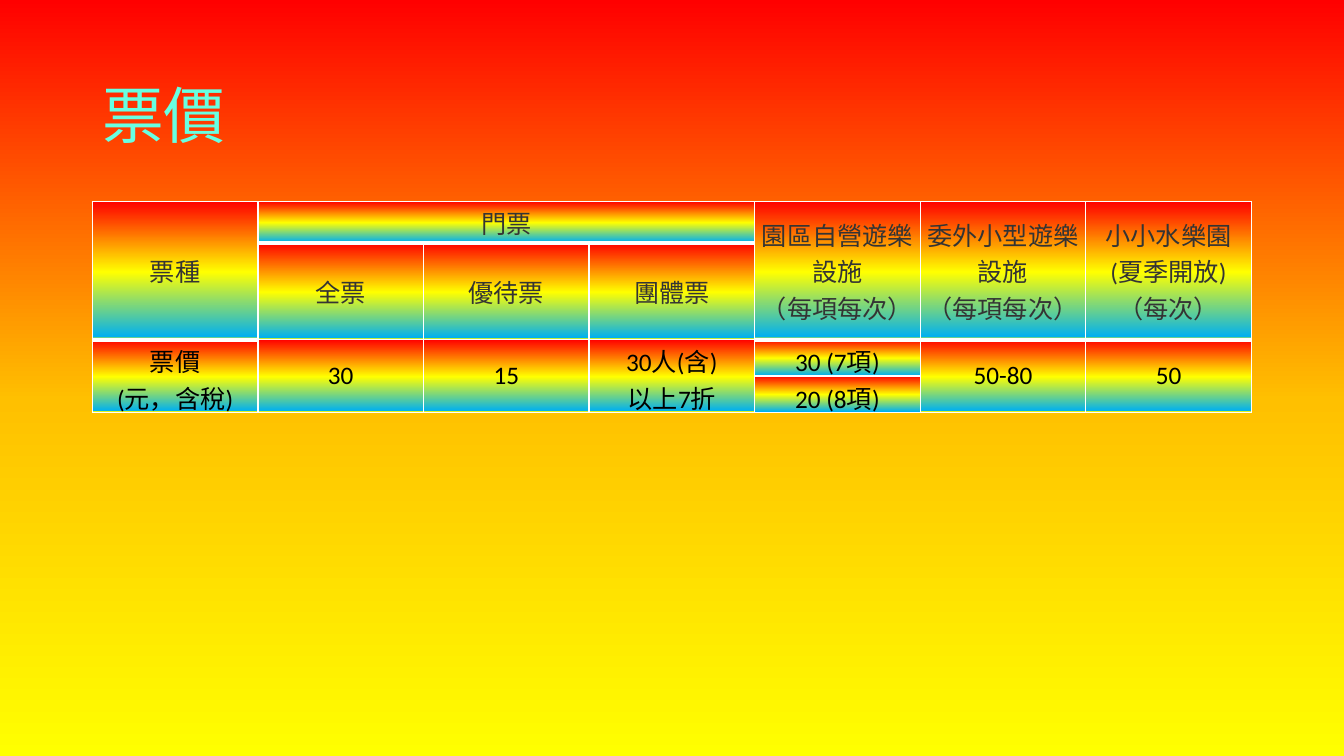
from typing import NamedTuple

from lxml.etree import SubElement
from pptx import Presentation
from pptx.dml.color import RGBColor
from pptx.dml.fill import FillFormat
from pptx.enum.text import MSO_ANCHOR as Anchor, PP_ALIGN as Align
from pptx.oxml.ns import qn
from pptx.oxml.xmlchemy import BaseOxmlElement as Element
from pptx.slide import Slide
from pptx.table import Table, _Cell as Cell
from pptx.text.text import TextFrame
from pptx.util import Pt

RED = RGBColor(0xFF, 0x00, 0x00)
AMBER = RGBColor(0xFF, 0xC0, 0x00)
YELLOW = RGBColor(0xFF, 0xFF, 0x00)
BLUE = RGBColor(0x00, 0xB0, 0xF0)
LEMON = RGBColor(0xFC, 0xFE, 0x02)
PALE_LEMON = RGBColor(0xFE, 0xFF, 0x01)
AQUA = RGBColor(0x67, 0xFF, 0xE2)
CHARCOAL = RGBColor(0x34, 0x34, 0x34)
BLACK = RGBColor(0x00, 0x00, 0x00)
WHITE = RGBColor(0xFF, 0xFF, 0xFF)

FONT = "Calibri"
HEADER_ROWS = 2
ROW_HEIGHTS = (29.52, 29.52, 23.76, 23.76)
COLUMN_COUNT = 7
CELL_MARGIN = 2.16


class Stop(NamedTuple):
    percent: int
    color: RGBColor


class PriceCell(NamedTuple):
    row: int
    column: int
    text: str
    row_span: int = 1
    column_span: int = 1


BACKGROUND_STOPS = (Stop(0, RED), Stop(53, AMBER), Stop(100, YELLOW))
CELL_STOPS = (Stop(0, RED), Stop(51, YELLOW), Stop(98, BLUE),
              Stop(99, LEMON), Stop(100, PALE_LEMON))

PRICE_CELLS = (
    PriceCell(0, 0, "票種", row_span=2),
    PriceCell(0, 1, "門票", column_span=3),
    PriceCell(0, 4, "園區自營遊樂設施\n（每項每次）", row_span=2),
    PriceCell(0, 5, "委外小型遊樂設施\n（每項每次）", row_span=2),
    PriceCell(0, 6, "小小水樂園\n(夏季開放)\n（每次）", row_span=2),
    PriceCell(1, 1, "全票"),
    PriceCell(1, 2, "優待票"),
    PriceCell(1, 3, "團體票"),
    PriceCell(2, 0, "票價\n(元，含稅)", row_span=2),
    PriceCell(2, 1, "30", row_span=2),
    PriceCell(2, 2, "15", row_span=2),
    PriceCell(2, 3, "30人(含)\n以上7折", row_span=2),
    PriceCell(2, 4, "30 (7項)"),
    PriceCell(2, 5, "50-80", row_span=2),
    PriceCell(2, 6, "50", row_span=2),
    PriceCell(3, 4, "20 (8項)"),
)


def write_text(frame: TextFrame, text: str, *, size: float, color: RGBColor,
               align: Align = Align.LEFT, line_spacing: float = 1.0) -> None:
    paragraph = frame.paragraphs[0]
    paragraph.text = text.replace("\n", "\v")
    paragraph.alignment = align
    paragraph.line_spacing = line_spacing
    for run in paragraph.runs:
        run.font.name = FONT
        run.font.size = Pt(size)
        run.font.bold = False
        run.font.color.rgb = color


def fill_gradient(fill: FillFormat, owner: Element, stops: tuple[Stop, ...]) -> None:
    fill.gradient()
    fill.gradient_angle = 270
    stop_list = next(owner.iter(qn("a:gsLst")))
    stop_list.clear()
    for stop in stops:
        node = SubElement(stop_list, qn("a:gs"), pos=str(stop.percent * 1000))
        SubElement(node, qn("a:srgbClr"), val=str(stop.color))


def draw_borders(cell: Cell, bottom: float) -> None:
    properties = cell._tc.get_or_add_tcPr()
    for index, (side, width) in enumerate((("L", 1), ("R", 1), ("T", 1), ("B", bottom))):
        line = SubElement(properties, qn(f"a:ln{side}"), w=str(Pt(width)))
        solid = SubElement(line, qn("a:solidFill"))
        SubElement(solid, qn("a:srgbClr"), val=str(WHITE))
        properties.insert(index, line)


def style_cells(table: Table) -> None:
    for row_index, row in enumerate(table.rows):
        row.height = Pt(ROW_HEIGHTS[row_index])
        for cell in row.cells:
            cell.margin_left = cell.margin_right = Pt(CELL_MARGIN)
            cell.margin_top = cell.margin_bottom = Pt(CELL_MARGIN)
            cell.vertical_anchor = Anchor.MIDDLE
            fill_gradient(cell.fill, cell._tc, CELL_STOPS)
            draw_borders(cell, bottom=3 if row_index == 0 else 1)


def add_price_table(slide: Slide) -> None:
    table = slide.shapes.add_table(len(ROW_HEIGHTS), COLUMN_COUNT, Pt(66), Pt(144),
                                   Pt(828), Pt(sum(ROW_HEIGHTS))).table
    table.first_row = table.horz_banding = False
    style_cells(table)
    for price in PRICE_CELLS:
        cell = table.cell(price.row, price.column)
        if price.row_span > 1 or price.column_span > 1:
            cell.merge(table.cell(price.row + price.row_span - 1,
                                  price.column + price.column_span - 1))
        write_text(cell.text_frame, price.text, size=18, align=Align.CENTER,
                   color=CHARCOAL if price.row < HEADER_ROWS else BLACK)


def add_title(slide: Slide) -> None:
    frame = slide.shapes.add_textbox(Pt(66), Pt(32.4), Pt(810.72), Pt(104.4)).text_frame
    frame.word_wrap = True
    frame.vertical_anchor = Anchor.MIDDLE
    write_text(frame, "票價", size=44, color=AQUA, line_spacing=0.9)


def main() -> None:
    presentation = Presentation()
    presentation.slide_width = Pt(960)
    presentation.slide_height = Pt(540)
    slide = presentation.slides.add_slide(presentation.slide_layouts[6])
    fill_gradient(slide.background.fill, slide._element, BACKGROUND_STOPS)
    add_title(slide)
    add_price_table(slide)
    presentation.save("out.pptx")


if __name__ == "__main__":
    main()
